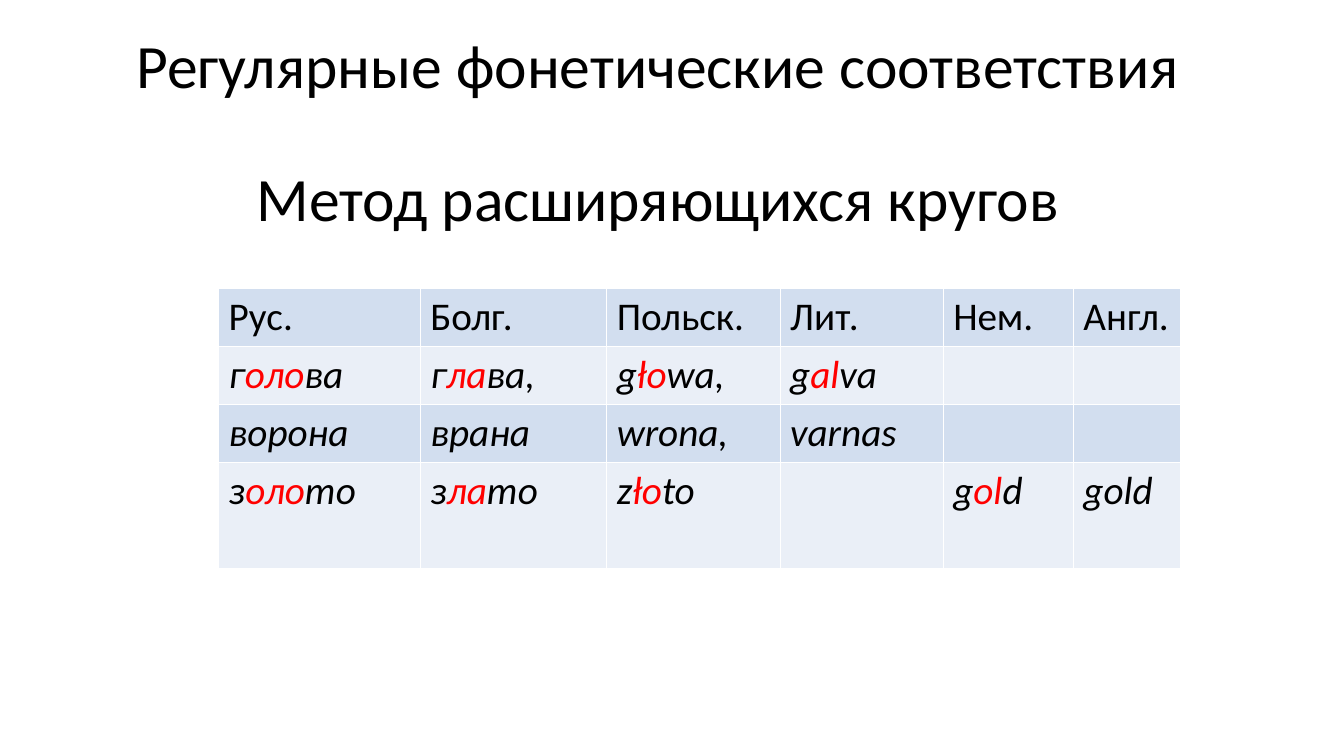
from dataclasses import dataclass

from lxml.etree import SubElement
from pptx import Presentation
from pptx.dml.color import RGBColor
from pptx.enum.text import MSO_ANCHOR as Anchor, MSO_AUTO_SIZE as AutoSize, PP_ALIGN as Align
from pptx.oxml.ns import qn
from pptx.slide import Slide
from pptx.table import _Cell as Cell
from pptx.text.text import _Paragraph as Paragraph
from pptx.util import Cm, Pt

COLORS = {
    "text": "000000",
    "accent": "FF0000",
    "band_dark": "D2DEEF",
    "band_light": "EAEFF7",
    "border": "FFFFFF",
}
FONT = "Calibri"
TITLE_LINES = ["Регулярные фонетические соответствия", "Метод расширяющихся кругов"]
COLUMN_WIDTHS = [5.08, 4.7, 4.37, 4.11, 3.28, 2.69]
ROW_HEIGHTS = [1.46, 1.46, 1.46, 2.67]


@dataclass(frozen=True)
class Word:
    """A word whose matching sounds stand out in the accent colour."""
    start: str = ""
    match: str = ""
    end: str = ""


HEADERS = [Word(name) for name in ("Рус.", "Болг.", "Польск.", "Лит.", "Нем.", "Англ.")]
WORD_ROWS = [
    [Word("г", "оло", "ва"), Word("г", "ла", "ва,"), Word("g", "ło", "wa,"),
     Word("g", "al", "va"), Word(), Word()],
    [Word("ворона"), Word("врана"), Word("wrona,"), Word("varnas"), Word(), Word()],
    [Word("з", "оло", "то"), Word("з", "ла", "то"), Word("z", "ło", "to"),
     Word(), Word("g", "ol", "d"), Word("gold")],
]


def add_run(paragraph: Paragraph, text: str, size: int, color: str = "text",
            italic: bool = False) -> None:
    run = paragraph.add_run()
    run.text = text
    run.font.name = FONT
    run.font.size = Pt(size)
    run.font.italic = italic
    run.font.color.rgb = RGBColor.from_string(COLORS[color])


def add_borders(cell: Cell) -> None:
    properties = cell._tc.get_or_add_tcPr()
    for side in ("lnL", "lnR", "lnT", "lnB"):
        line = SubElement(properties, qn(f"a:{side}"), w=str(Pt(1)))
        fill = SubElement(line, qn("a:solidFill"))
        SubElement(fill, qn("a:srgbClr"), val=COLORS["border"])


def fill_cell(cell: Cell, word: Word, band: str, italic: bool) -> None:
    add_borders(cell)
    cell.fill.solid()
    cell.fill.fore_color.rgb = RGBColor.from_string(COLORS[band])
    paragraph = cell.text_frame.paragraphs[0]
    for text, color in ((word.start, "text"), (word.match, "accent"), (word.end, "text")):
        if text:
            add_run(paragraph, text, 28, color, italic)


def add_title(slide: Slide) -> None:
    title = slide.shapes.title
    title.left, title.top, title.width, title.height = Cm(1.98), Cm(0.28), Cm(29.21), Cm(6.25)
    frame = title.text_frame
    frame.word_wrap = True
    frame.auto_size = AutoSize.NONE
    frame.vertical_anchor = Anchor.MIDDLE
    for index, text in enumerate(TITLE_LINES):
        paragraph = frame.add_paragraph() if index else frame.paragraphs[0]
        paragraph.alignment = Align.CENTER
        paragraph.line_spacing = 0.9
        paragraph.space_before = Pt(48 if index else 0)
        add_run(paragraph, text, 44)


def add_word_table(slide: Slide) -> None:
    rows = [HEADERS, *WORD_ROWS]
    table = slide.shapes.add_table(
        len(rows), len(HEADERS), Cm(5.51), Cm(7.27),
        Cm(sum(COLUMN_WIDTHS)), Cm(sum(ROW_HEIGHTS))).table
    table.first_row = False
    table.horz_banding = False
    for column, width in zip(table.columns, COLUMN_WIDTHS):
        column.width = Cm(width)
    for row_index, (words, height) in enumerate(zip(rows, ROW_HEIGHTS)):
        table.rows[row_index].height = Cm(height)
        band = "band_light" if row_index % 2 else "band_dark"
        for column_index, word in enumerate(words):
            fill_cell(table.cell(row_index, column_index), word, band, italic=row_index > 0)


def main() -> None:
    presentation = Presentation()
    presentation.slide_width, presentation.slide_height = Cm(33.87), Cm(19.05)
    # Title-only layout
    slide = presentation.slides.add_slide(presentation.slide_layouts[5])
    # Heading and the table of cognates
    add_title(slide)
    add_word_table(slide)
    presentation.save("out.pptx")


if __name__ == "__main__":
    main()
